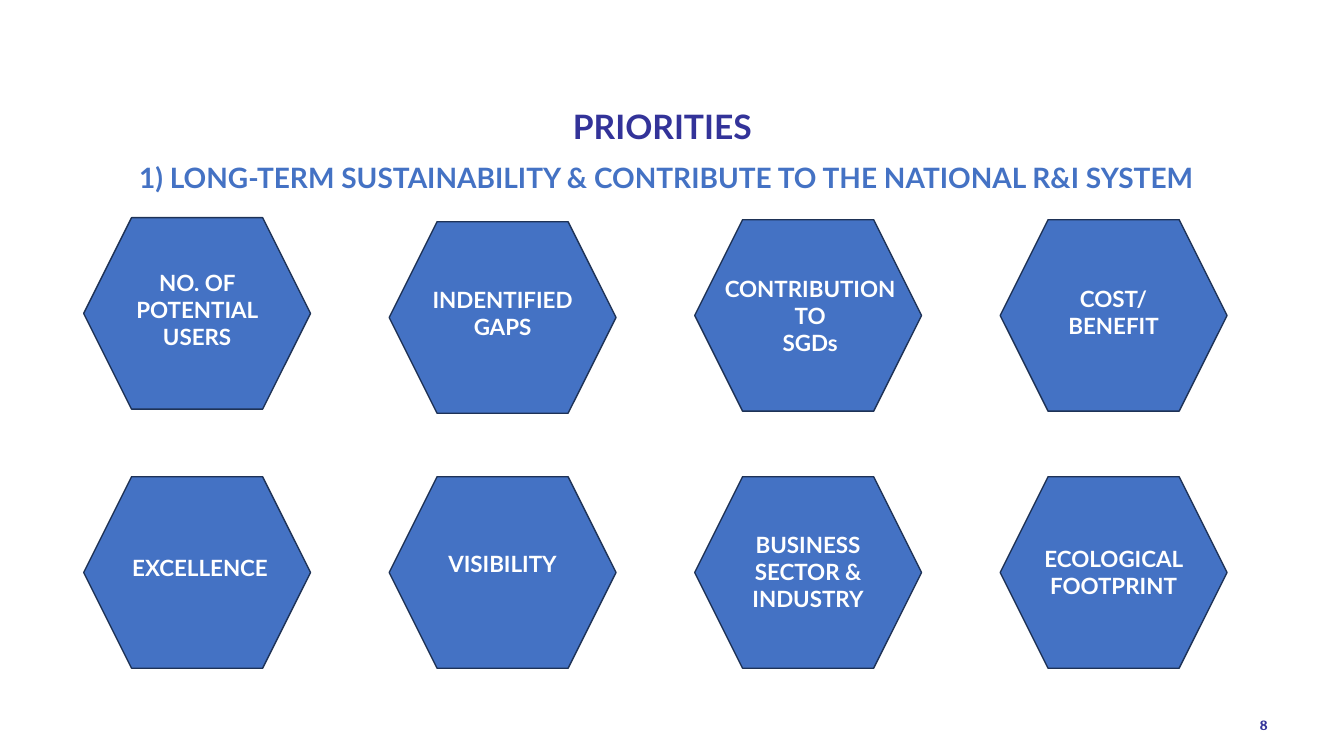
import dataclasses

import pptx
import pptx.dml.color
import pptx.enum.shapes
import pptx.enum.text
import pptx.util

Inches = pptx.util.Inches
Align = pptx.enum.text.PP_ALIGN


@dataclasses.dataclass(frozen=True)
class Theme:
    navy: str = "333399"
    blue: str = "4472C4"
    outline: str = "1E3256"
    white: str = "FFFFFF"
    font: str = "Lato"
    number_font: str = "Cambria"
    title_size: int = 24
    subtitle_size: int = 20
    label_size: int = 16
    number_size: int = 10


@dataclasses.dataclass(frozen=True)
class Priority:
    """One hexagon; drops are measured down from the top of its grid cell."""
    lines: tuple
    label_drop: float
    label_height: float
    hexagon_drop: float = 0
    label_shift: float = 0
    label_width: float = 1.9


THEME = Theme()
SLIDE_WIDTH, SLIDE_HEIGHT = 13.33, 7.5
GRID_BOX = (0.83, 2.16, 11.34, 4.47)
HEXAGON_WIDTH, HEXAGON_HEIGHT = 2.25, 1.9
PRIORITIES = (
    (
        Priority(("NO. OF POTENTIAL USERS",), 0.46, 0.91),
        Priority(("INDENTIFIED GAPS",), 0.63, 0.64, 0.04),
        Priority(("CONTRIBUTION TO", "SGDs"), 0.52, 0.94, 0.02, 0.02, 2.07),
        Priority(("COST/", "BENEFIT"), 0.62, 0.64, 0.02),
    ),
    (
        Priority(("EXCELLENCE",), 0.72, 0.37, label_shift=0.03),
        Priority(("VISIBILITY",), 0.68, 0.37),
        Priority(("BUSINESS SECTOR & INDUSTRY",), 0.49, 0.91),
        Priority(("ECOLOGICAL FOOTPRINT",), 0.63, 0.64),
    ),
)


def color(code):
    return pptx.dml.color.RGBColor.from_string(code)


def add_text(slide, box, lines, styles, align=Align.CENTER, font_name=THEME.font):
    """Add a bold text box; styles holds one (size, colour) pair per line."""
    text_frame = slide.shapes.add_textbox(*map(Inches, box)).text_frame
    text_frame.text = "\n".join(lines)
    text_frame.word_wrap = True
    text_frame.auto_size = pptx.enum.text.MSO_AUTO_SIZE.SHAPE_TO_FIT_TEXT
    for paragraph, (size, code) in zip(text_frame.paragraphs, styles):
        paragraph.alignment = align
        for run in paragraph.runs:
            run.font.name = font_name
            run.font.size = pptx.util.Pt(size)
            run.font.bold = True
            run.font.color.rgb = color(code)
    return text_frame


def add_heading(slide, box):
    lines = (
        "PRIORITIES ",
        "1) LONG-TERM SUSTAINABILITY & CONTRIBUTE TO THE NATIONAL R&I SYSTEM",
    )
    styles = ((THEME.title_size, THEME.navy), (THEME.subtitle_size, THEME.blue))
    text_frame = add_text(slide, box, lines, styles)
    text_frame.paragraphs[0].space_after = pptx.util.Pt(10)


def add_hexagon(slide, left, top):
    hexagon = slide.shapes.add_shape(
        pptx.enum.shapes.MSO_SHAPE.HEXAGON,
        *map(Inches, (left, top, HEXAGON_WIDTH, HEXAGON_HEIGHT)),
    )
    hexagon.shadow.inherit = False
    hexagon.fill.solid()
    hexagon.fill.fore_color.rgb = color(THEME.blue)
    hexagon.line.color.rgb = color(THEME.outline)
    hexagon.line.width = pptx.util.Pt(1)


def add_priority(slide, left, top, priority):
    add_hexagon(slide, left, top + priority.hexagon_drop)
    label_left = left + (HEXAGON_WIDTH - priority.label_width) / 2 + priority.label_shift
    label_box = (label_left, top + priority.label_drop,
                 priority.label_width, priority.label_height)
    styles = [(THEME.label_size, THEME.white)] * len(priority.lines)
    add_text(slide, label_box, priority.lines, styles)


def add_priority_grid(slide, box, rows):
    left, top, width, height = box
    column_step = (width - HEXAGON_WIDTH) / (len(rows[0]) - 1)
    row_step = (height - HEXAGON_HEIGHT) / (len(rows) - 1)
    for row_index, row in enumerate(rows):
        for column_index, priority in enumerate(row):
            add_priority(slide, left + column_index * column_step,
                         top + row_index * row_step, priority)


def add_slide_number(slide, box):
    add_text(slide, box, ("8",), ((THEME.number_size, THEME.navy),),
             Align.RIGHT, THEME.number_font)


def main():
    presentation = pptx.Presentation()
    presentation.slide_width = Inches(SLIDE_WIDTH)
    presentation.slide_height = Inches(SLIDE_HEIGHT)
    slide = presentation.slides.add_slide(presentation.slide_layouts[6])
    add_slide_number(slide, (11.74, 7.06, 0.93, 0.29))
    add_heading(slide, (0.05, 1, 13.12, 0.98))
    add_priority_grid(slide, GRID_BOX, PRIORITIES)
    presentation.save("out.pptx")


if __name__ == "__main__":
    main()
